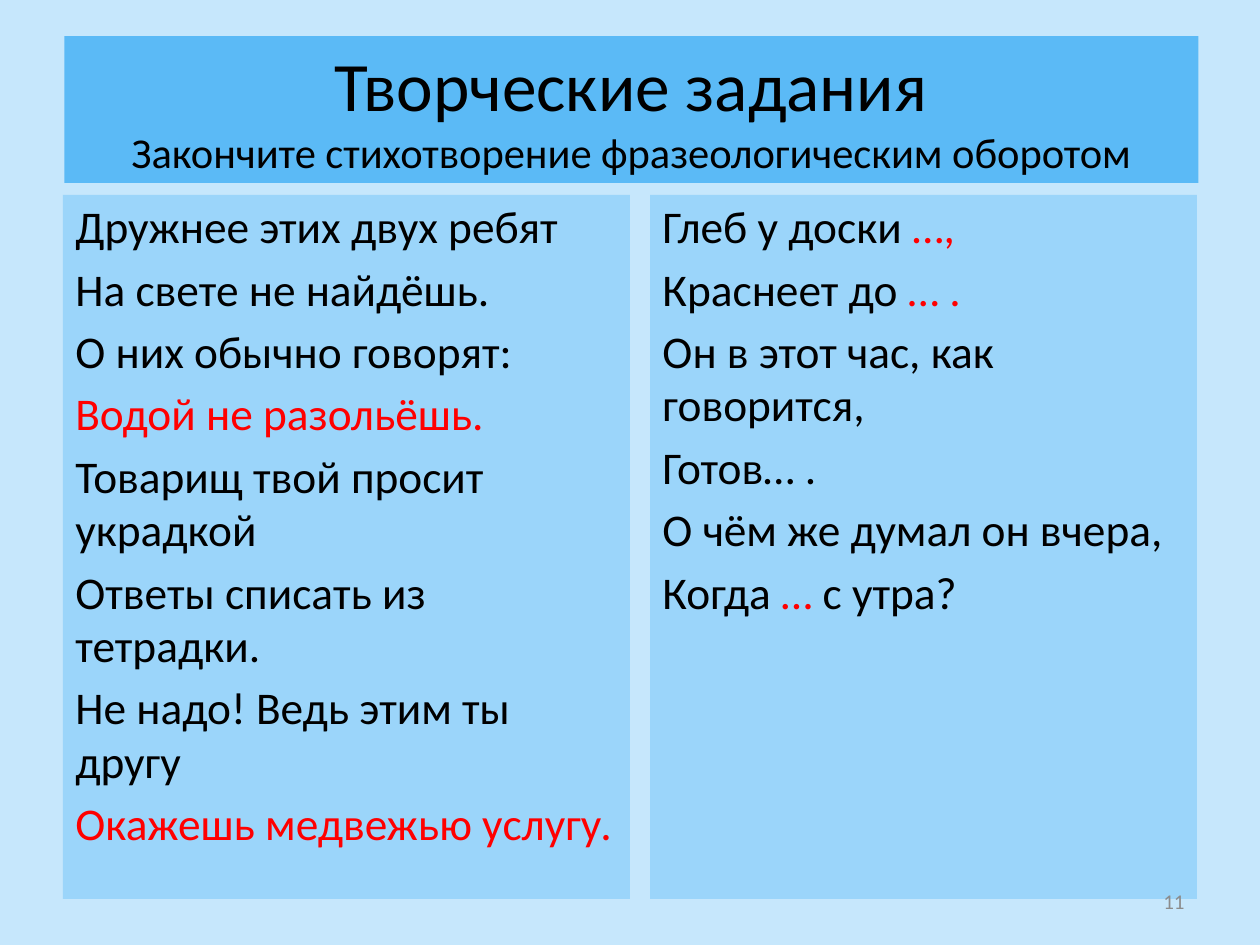
from pptx import Presentation
from pptx.dml.color import RGBColor
from pptx.enum import shapes, text
from pptx.util import Pt

SKY = RGBColor(0xC6, 0xE7, 0xFC)
BLUE = RGBColor(0x5B, 0xBA, 0xF6)
PALE = RGBColor(0x9B, 0xD5, 0xFA)
BLACK = RGBColor(0, 0, 0)
RED = RGBColor(0xFF, 0, 0)
GREY = RGBColor(0x8C, 0x8C, 0x8C)

# Text between bars is red
LEFT = [
    "Дружнее этих двух ребят",
    "На свете не найдёшь.",
    "О них обычно говорят:",
    "|Водой не разольёшь.|",
    "Товарищ твой просит украдкой",
    "Ответы списать из тетрадки.",
    "Не надо! Ведь этим ты другу",
    "|Окажешь медвежью услугу.|",
]
RIGHT = [
    "Глеб у доски |…,|",
    "Краснеет до |… .|",
    "Он в этот час, как говорится,",
    "Готов… .",
    "О чём же думал он вчера,",
    "Когда |…| с утра?",
]


def add_panel(x, y, w, h, fill):
    box = slide.shapes.add_shape(
        shapes.MSO_SHAPE.RECTANGLE, Pt(x), Pt(y), Pt(w), Pt(h))
    box.shadow.inherit = False
    box.fill.solid()
    box.fill.fore_color.rgb = fill
    box.line.fill.background()
    box.text_frame.word_wrap = True
    return box.text_frame


def add_run(para, words, size, color):
    run = para.add_run()
    run.text = words
    run.font.name = "Calibri"
    run.font.size = Pt(size)
    run.font.color.rgb = color


prs = Presentation()
prs.slide_width, prs.slide_height = Pt(720), Pt(540)
slide = prs.slides.add_slide(prs.slide_layouts[6])
slide.background.fill.solid()
slide.background.fill.fore_color.rgb = SKY

# Title
frame = add_panel(36.8, 20.6, 648, 84, BLUE)
frame.vertical_anchor = text.MSO_ANCHOR.MIDDLE
para = frame.paragraphs[0]
para.alignment = text.PP_ALIGN.CENTER
add_run(para, "Творческие задания", 39.6, BLACK)
para.add_line_break()
add_run(para, "Закончите стихотворение фразеологическим оборотом", 24.3, BLACK)

# Two columns of verse
for x, w, verse in [(36, 324, LEFT), (371.5, 312.5, RIGHT)]:
    frame = add_panel(x, 111.4, w, 402.3, PALE)
    frame.vertical_anchor = text.MSO_ANCHOR.TOP
    for i, line in enumerate(verse):
        para = frame.paragraphs[0] if i == 0 else frame.add_paragraph()
        para.alignment = text.PP_ALIGN.LEFT
        para.line_spacing = 0.98
        para.space_before = Pt(5.2 if i else 0)
        for j, part in enumerate(line.split("|")):
            if part:
                add_run(para, part, 25.9, RED if j % 2 else BLACK)

# Slide number
frame = slide.shapes.add_textbox(
    Pt(516), Pt(500.5), Pt(168), Pt(28.75)).text_frame
frame.word_wrap = True
frame.vertical_anchor = text.MSO_ANCHOR.MIDDLE
para = frame.paragraphs[0]
para.alignment = text.PP_ALIGN.RIGHT
add_run(para, "11", 12, GREY)

prs.save("out.pptx")
